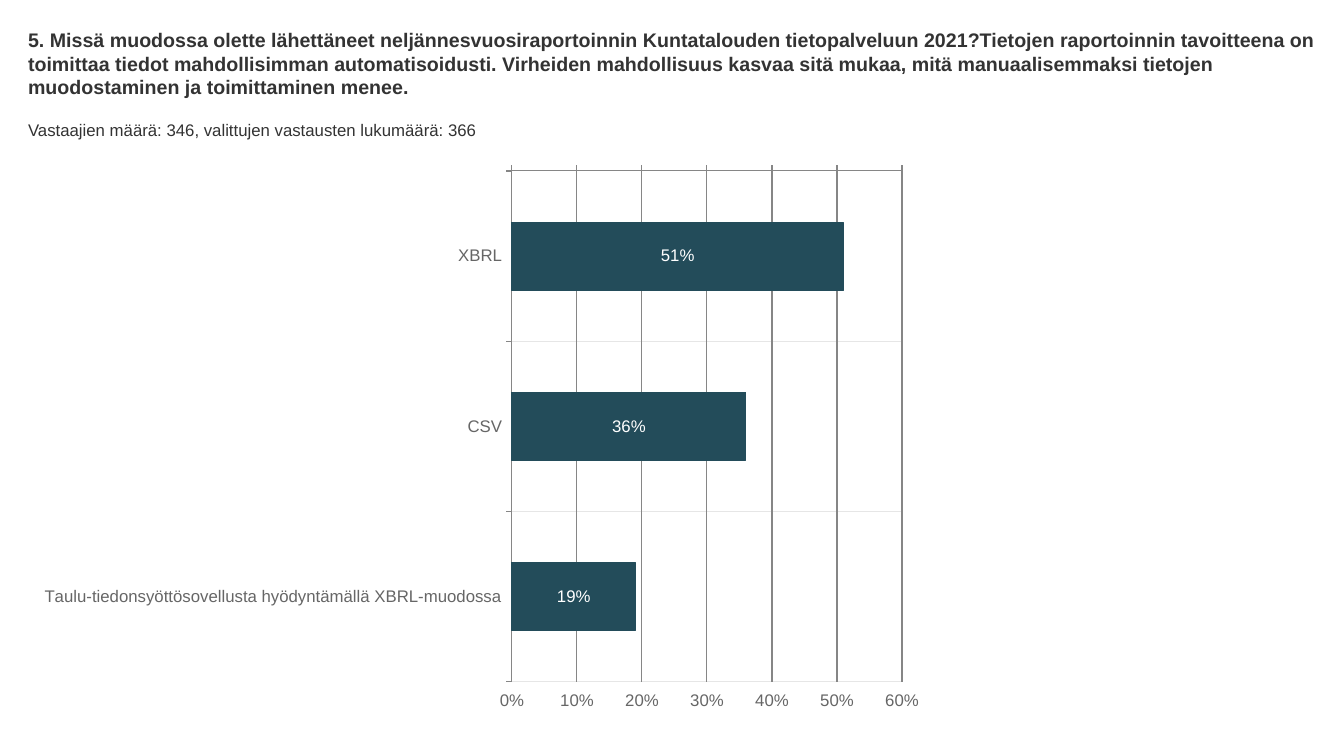
from dataclasses import dataclass
from pptx import Presentation
from pptx.chart.data import CategoryChartData
from pptx.dml.color import RGBColor
from pptx.enum.chart import XL_CHART_TYPE, XL_LABEL_POSITION, XL_TICK_LABEL_POSITION, XL_TICK_MARK
from pptx.enum.text import MSO_ANCHOR, MSO_AUTO_SIZE, PP_ALIGN
from pptx.oxml import parse_xml
from pptx.oxml.ns import nsdecls
from pptx.util import Emu, Pt

BAR = XL_CHART_TYPE.BAR_CLUSTERED
CENTER = XL_LABEL_POSITION.CENTER
LABELS_LOW = XL_TICK_LABEL_POSITION.LOW
LABELS_HIGH = XL_TICK_LABEL_POSITION.HIGH
TICK_OUT = XL_TICK_MARK.OUTSIDE
TICK_NONE = XL_TICK_MARK.NONE
TOP = MSO_ANCHOR.TOP
NO_FIT = MSO_AUTO_SIZE.NONE
LEFT = PP_ALIGN.LEFT

QUESTION = (
    "5. Missä muodossa olette lähettäneet neljännesvuosiraportoinnin Kuntatalouden "
    "tietopalveluun 2021?Tietojen raportoinnin tavoitteena on toimittaa tiedot "
    "mahdollisimman automatisoidusti. Virheiden mahdollisuus kasvaa sitä mukaa, mitä "
    "manuaalisemmaksi tietojen muodostaminen ja toimittaminen menee."
)
RESPONDENTS = "Vastaajien määrä: 346, valittujen vastausten lukumäärä: 366"
ANSWERS = [
    ("XBRL", 0.51),
    ("CSV", 0.36),
    ("Taulu-tiedonsyöttösovellusta hyödyntämällä XBRL-muodossa", 0.19),
]

SLIDE_SIZE = (1344, 756)
QUESTION_BOX = (28, 28, 1289, 71)
RESPONDENTS_BOX = (28, 120, 1289, 20)
CHART_BOX = (28, 161, 910, 560)
PLOT_BOX = (512, 171, 390, 511)
EMU_PER_PX = 914400 / 100.8


@dataclass(frozen=True)
class Theme:
    font: str = "Arial"
    ink: str = "333333"
    muted: str = "666666"
    bar: str = "234C5A"
    on_bar: str = "FFFFFF"
    axis: str = "868686"
    pale_grid: str = "E6E6E6"
    heading: int = 14
    body: int = 12


THEME = Theme()


def px(*lengths):
    return [Emu(round(length * EMU_PER_PX)) for length in lengths]


def set_font(font, size=THEME.body, color=THEME.ink, bold=False):
    font.name = THEME.font
    font.size = Pt(size)
    font.bold = bold
    font.color.rgb = RGBColor.from_string(color)


def write(holder, text, box, **font_format):
    holder.left, holder.top, holder.width, holder.height = px(*box)
    frame = holder.text_frame
    frame.margin_left = frame.margin_top = frame.margin_right = frame.margin_bottom = 0
    frame.word_wrap = True
    frame.auto_size = NO_FIT
    frame.vertical_anchor = TOP
    paragraph = frame.paragraphs[0]
    paragraph.alignment = LEFT
    run = paragraph.add_run()
    run.text = text
    set_font(run.font, **font_format)


def set_line(line, color):
    line.color.rgb = RGBColor.from_string(color)
    line.width = Pt(0.75)


def style_axis(axis, labels, grid):
    axis.has_major_gridlines = True
    set_line(axis.major_gridlines.format.line, grid)
    set_line(axis.format.line, THEME.axis)
    axis.major_tick_mark = TICK_OUT
    axis.minor_tick_mark = TICK_NONE
    axis.tick_label_position = labels
    set_font(axis.tick_labels.font, color=THEME.muted)


def place_plot(chart):
    left, top, width, height = CHART_BOX
    plot_left, plot_top, plot_width, plot_height = PLOT_BOX
    shares = {
        "x": (plot_left - left) / width,
        "y": (plot_top - top) / height,
        "w": plot_width / width,
        "h": plot_height / height,
    }
    modes = "".join(f'<c:{key}Mode val="edge"/>' for key in "xy")
    sizes = "".join(f'<c:{key} val="{share:.4f}"/>' for key, share in shares.items())
    layout = parse_xml(
        f'<c:layout {nsdecls("c")}><c:manualLayout><c:layoutTarget val="inner"/>'
        f"{modes}{sizes}</c:manualLayout></c:layout>"
    )
    plot_area = chart.element.chart.plotArea
    for old_layout in plot_area.findall(layout.tag):
        plot_area.remove(old_layout)
    plot_area.insert(0, layout)


def add_answers(slide):
    answers = CategoryChartData(number_format="0%")
    answers.categories = [answer for answer, share in ANSWERS]
    answers.add_series("Series 1", [share for answer, share in ANSWERS])
    chart = slide.shapes.add_chart(BAR, *px(*CHART_BOX), answers).chart
    chart.has_title = False
    chart.has_legend = False
    set_font(chart.font)

    style_axis(chart.category_axis, LABELS_LOW, THEME.pale_grid)
    chart.category_axis.reverse_order = True
    style_axis(chart.value_axis, LABELS_HIGH, THEME.axis)
    chart.value_axis.minimum_scale = 0
    chart.value_axis.maximum_scale = 0.6
    chart.value_axis.major_unit = 0.1
    chart.value_axis.tick_labels.number_format = "0%"
    chart.value_axis.tick_labels.number_format_is_linked = False

    bars = chart.plots[0]
    bars.gap_width = 150
    bars.vary_by_categories = False
    shares = bars.series[0]
    shares.format.fill.solid()
    shares.format.fill.fore_color.rgb = RGBColor.from_string(THEME.bar)
    set_line(shares.format.line, THEME.bar)
    labels = shares.data_labels
    labels.show_value = True
    labels.number_format = "0%"
    labels.number_format_is_linked = False
    labels.position = CENTER
    set_font(labels.font, color=THEME.on_bar)
    place_plot(chart)


def main():
    deck = Presentation()
    deck.slide_width, deck.slide_height = px(*SLIDE_SIZE)
    slide = deck.slides.add_slide(deck.slide_layouts[5])
    write(slide.shapes.title, QUESTION, QUESTION_BOX, size=THEME.heading, bold=True)
    respondents = slide.shapes.add_textbox(*px(*RESPONDENTS_BOX))
    write(respondents, RESPONDENTS, RESPONDENTS_BOX)
    add_answers(slide)
    deck.save("out.pptx")


if __name__ == "__main__":
    main()
